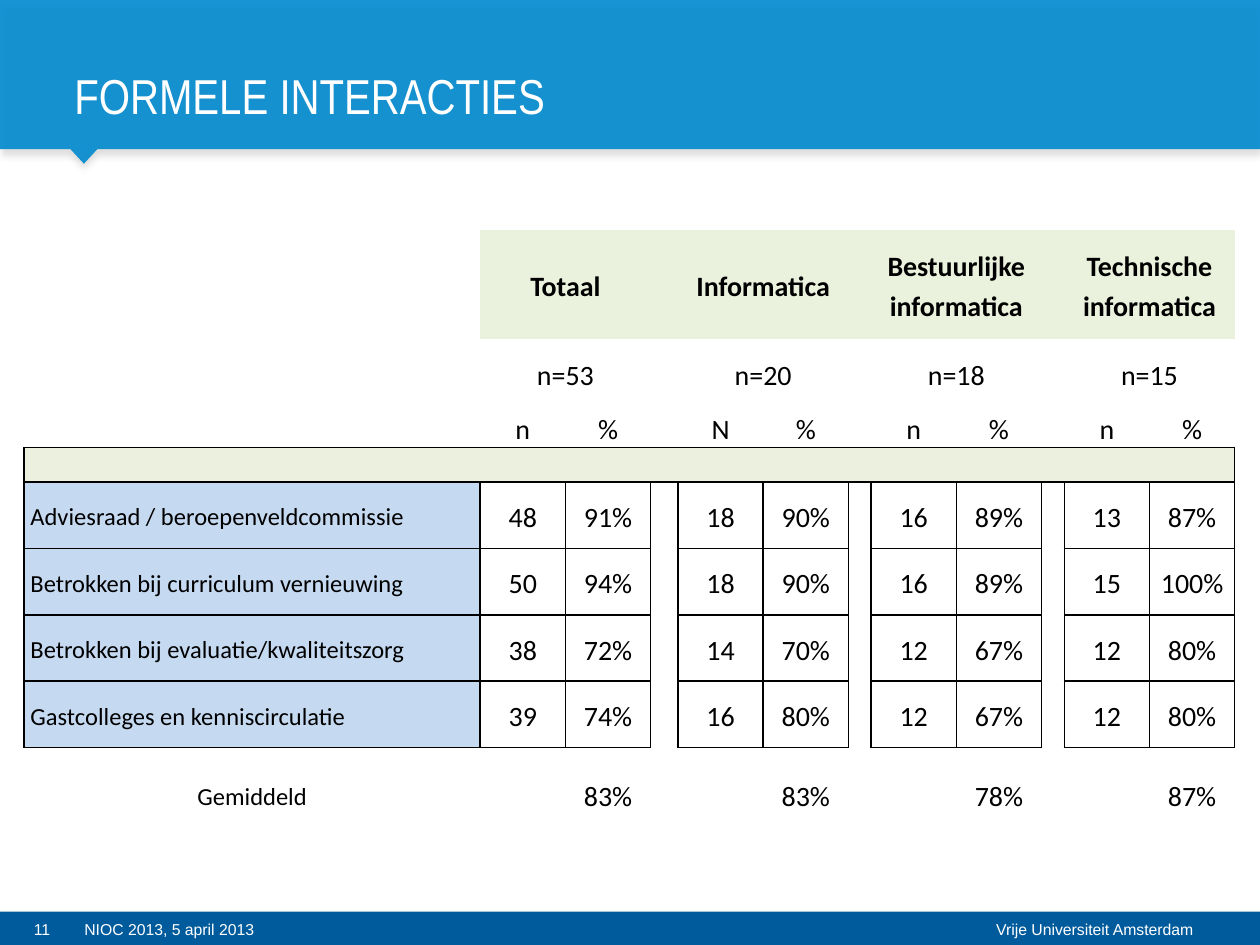
from lxml.etree import SubElement
from pptx import Presentation
from pptx.dml.color import RGBColor
from pptx.enum.shapes import MSO_SHAPE
from pptx.enum.text import MSO_ANCHOR, MSO_AUTO_SIZE, PP_ALIGN
from pptx.oxml.ns import qn
from pptx.util import Pt

WHITE = RGBColor(0xFF, 0xFF, 0xFF)
BLACK = RGBColor(0, 0, 0)
BANNER_BLUE = RGBColor(0x00, 0x89, 0xCF)
FOOTER_BLUE = RGBColor(0x00, 0x5B, 0x9D)
HEADER_GREEN = RGBColor(0xEA, 0xF1, 0xDD)
DIVIDER_GREEN = RGBColor(0xEB, 0xF1, 0xDE)
LABEL_BLUE = RGBColor(0xC5, 0xD9, 0xF1)
SHADOW_GREY = RGBColor(0xA6, 0xA6, 0xA6)

GROUPS = [
    ("Totaal", "n=53", "n", "83%"),
    ("Informatica", "n=20", "N", "83%"),
    ("Bestuurlijke informatica", "n=18", "n", "78%"),
    ("Technische informatica", "n=15", "n", "87%"),
]
INTERACTIONS = [
    ("Adviesraad / beroepenveldcommissie",
     [("48", "91%"), ("18", "90%"), ("16", "89%"), ("13", "87%")]),
    ("Betrokken bij curriculum vernieuwing",
     [("50", "94%"), ("18", "90%"), ("16", "89%"), ("15", "100%")]),
    ("Betrokken bij evaluatie/kwaliteitszorg",
     [("38", "72%"), ("14", "70%"), ("12", "67%"), ("12", "80%")]),
    ("Gastcolleges en kenniscirculatie",
     [("39", "74%"), ("16", "80%"), ("12", "67%"), ("12", "80%")]),
]
NUMBER = 48.7
COLUMNS = [260.6, NUMBER, NUMBER, 15.6, NUMBER, NUMBER, 13, NUMBER, NUMBER, 13, NUMBER, NUMBER]
ROWS = [62.3, 31, 31, 19.7] + [38] * len(INTERACTIONS) + [53.6]
SIZES, COUNTS, DIVIDER, FIRST_BODY = 1, 2, 3, 4
AVERAGE = len(ROWS) - 1
GAPS = (3, 6, 9)


def borders_of(row, column):
    """Return the sides (L, R, T, B) of a cell that carry a line."""
    if row <= SIZES:
        return ""
    if row == COUNTS:
        return "B"
    if row == AVERAGE:
        return "" if column in GAPS else "T"
    if column in GAPS and row != DIVIDER:
        return "LRT" if row == FIRST_BODY else "LR"
    return "LRTB"


def fill_of(row, column):
    if row == 0 and column > 0:
        return HEADER_GREEN
    if row == DIVIDER:
        return DIVIDER_GREEN
    if FIRST_BODY <= row < AVERAGE and column == 0:
        return LABEL_BLUE
    return None


def table_texts():
    """Map (row, column) to the text of each filled cell."""
    texts = {(AVERAGE, 0): "Gemiddeld"}
    for group, (name, size, count_head, average) in enumerate(GROUPS):
        column = 1 + 3 * group
        texts[0, column] = name
        texts[SIZES, column] = size
        texts[COUNTS, column] = count_head
        texts[COUNTS, column + 1] = "%"
        texts[AVERAGE, column + 1] = average
        for row, (label, values) in enumerate(INTERACTIONS, FIRST_BODY):
            texts[row, 0] = label
            texts[row, column], texts[row, column + 1] = values[group]
    return texts


class SlideBuilder:
    label_font, title_font, table_font = "Arial", "Arial Narrow", "Calibri"

    def __init__(self, slide):
        self.slide = slide

    def paint(self, shape, color):
        shape.fill.solid()
        shape.fill.fore_color.rgb = color
        shape.line.fill.background()
        shape.shadow.inherit = False

    def add_banner_effects(self, shape):
        """Make the fill slightly transparent and cast a soft shadow downwards."""
        properties = shape._element.spPr
        fill_color = properties.find(qn("a:solidFill"))[0]
        SubElement(fill_color, qn("a:alpha"), val="90000")
        shadow = SubElement(properties.find(qn("a:effectLst")), qn("a:outerShdw"),
                            blurRad=str(Pt(4)), dist=str(Pt(3)), dir="5400000",
                            algn="t", rotWithShape="0")
        shadow_color = SubElement(shadow, qn("a:srgbClr"), val=str(SHADOW_GREY))
        SubElement(shadow_color, qn("a:alpha"), val="40000")

    def format_paragraph(self, paragraph, font_name, size, color, align, bold=False):
        paragraph.alignment = align
        font = paragraph.font
        font.name, font.size, font.bold = font_name, Pt(size), bold
        font.color.rgb = color

    def shape(self, kind, left, top, width, height, color):
        shape = self.slide.shapes.add_shape(kind, Pt(left), Pt(top), Pt(width), Pt(height))
        self.paint(shape, color)
        return shape

    def title(self, text, width, height):
        title = self.slide.shapes.title
        title.left, title.top, title.width, title.height = 0, 0, Pt(width), Pt(height)
        self.paint(title, BANNER_BLUE)
        self.add_banner_effects(title)
        frame = title.text_frame
        frame.text = text
        frame.auto_size = MSO_AUTO_SIZE.NONE
        frame.vertical_anchor = MSO_ANCHOR.BOTTOM
        frame.margin_left, frame.margin_right = Pt(42.5), 0
        frame.margin_top = frame.margin_bottom = Pt(14.1)
        paragraph = frame.paragraphs[0]
        paragraph.line_spacing = Pt(32)
        self.format_paragraph(paragraph, self.title_font, 28, WHITE, PP_ALIGN.LEFT)

    def footer(self, text, left, width, align, margin=7.2):
        box = self.slide.shapes.add_textbox(Pt(left), Pt(511.2), Pt(width), Pt(28.8))
        frame = box.text_frame
        frame.word_wrap = True
        frame.vertical_anchor = MSO_ANCHOR.BOTTOM
        frame.margin_left = frame.margin_right = Pt(margin)
        frame.text = text
        self.format_paragraph(frame.paragraphs[0], self.label_font, 9, WHITE, align)

    def cell_borders(self, cell, sides):
        properties = cell._tc.get_or_add_tcPr()
        for index, side in enumerate("LRTB"):
            line = properties.makeelement(qn(f"a:ln{side}"), {"w": str(Pt(1))})
            if side in sides:
                SubElement(SubElement(line, qn("a:solidFill")), qn("a:srgbClr"), val=str(BLACK))
            else:
                SubElement(line, qn("a:noFill"))
            properties.insert(index, line)

    def cell(self, cell, row, column, text):
        cell.margin_left = cell.margin_right = Pt(3.6)
        cell.margin_top = cell.margin_bottom = 0
        cell.vertical_anchor = (MSO_ANCHOR.BOTTOM if row in (SIZES, COUNTS)
                                else MSO_ANCHOR.MIDDLE)
        color = fill_of(row, column)
        if color is None:
            cell.fill.background()
        else:
            cell.fill.solid()
            cell.fill.fore_color.rgb = color
        self.cell_borders(cell, borders_of(row, column))
        if not text:
            SubElement(cell.text_frame.paragraphs[0]._p, qn("a:endParaRPr"), sz="1200")
            return
        cell.text = text
        paragraph = cell.text_frame.paragraphs[0]
        paragraph.line_spacing = 1.15
        is_label = column == 0 and row < AVERAGE
        self.format_paragraph(paragraph, self.table_font, 16 if column else 14, BLACK,
                              PP_ALIGN.LEFT if is_label else PP_ALIGN.CENTER, bold=row == 0)

    def table(self, left, top, texts):
        table = self.slide.shapes.add_table(
            len(ROWS), len(COLUMNS), Pt(left), Pt(top), Pt(sum(COLUMNS)), Pt(sum(ROWS))).table
        table.first_row = table.horz_banding = False
        for column, width in enumerate(COLUMNS):
            table.columns[column].width = Pt(width)
        for row, height in enumerate(ROWS):
            table.rows[row].height = Pt(height)
            for column in range(len(COLUMNS)):
                self.cell(table.cell(row, column), row, column, texts.get((row, column)))
        for row in (0, SIZES):
            for column in range(1, len(COLUMNS), 3):
                table.cell(row, column).merge(table.cell(row, column + 1))
        table.cell(DIVIDER, 0).merge(table.cell(DIVIDER, len(COLUMNS) - 1))


def main():
    presentation = Presentation()
    presentation.slide_width, presentation.slide_height = Pt(720), Pt(540)
    builder = SlideBuilder(presentation.slides.add_slide(presentation.slide_layouts[5]))

    builder.title("FORMELE INTERACTIES", 720, 85.2)
    pointer = builder.shape(MSO_SHAPE.ISOSCELES_TRIANGLE, 40.2, 85.2, 15.5, 8.4, BANNER_BLUE)
    pointer._element.spPr.find(qn("a:xfrm")).set("flipV", "1")
    builder.add_banner_effects(pointer)

    builder.shape(MSO_SHAPE.RECTANGLE, 0, 521, 720, 19, FOOTER_BLUE)
    builder.footer("11", 0, 48.2, PP_ALIGN.CENTER)
    builder.footer("NIOC 2013, 5 april 2013", 48.2, 374.4, PP_ALIGN.LEFT, margin=0)
    builder.footer("Vrije Universiteit Amsterdam", 442, 247, PP_ALIGN.RIGHT)

    builder.table(13.8, 131.4, table_texts())
    presentation.save("out.pptx")


if __name__ == "__main__":
    main()
